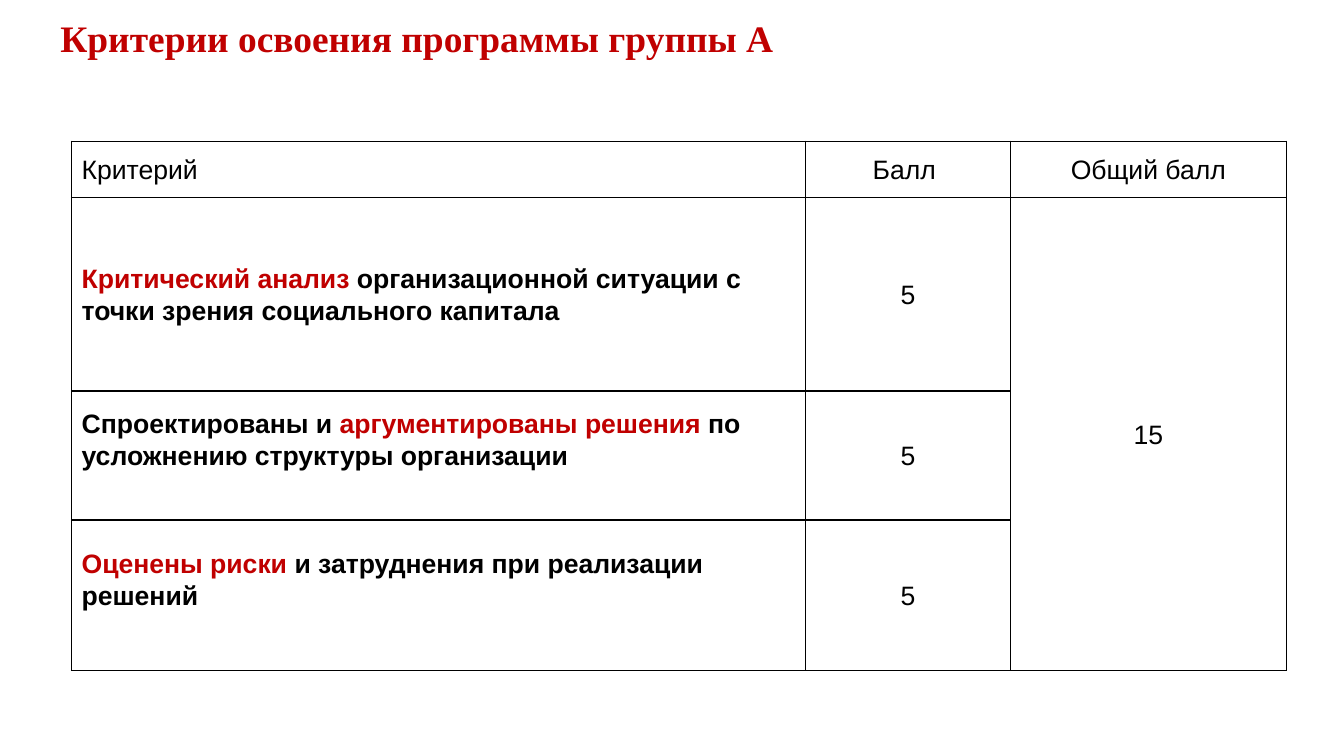
from lxml.etree import SubElement
from pptx import Presentation
from pptx.dml.color import RGBColor
from pptx.enum.text import MSO_ANCHOR, PP_ALIGN
from pptx.oxml.ns import qn
from pptx.util import Inches, Pt

RED, BLACK, WHITE = "C00000", "000000", "FFFFFF"
WIDTHS = [7.28, 2.03, 2.74]
HEIGHTS = [0.56, 1.92, 1.28, 1.49]
HEADS = ["Критерий", "Балл ", "Общий балл"]
# Runs and bottom margin of each criterion
CRITERIA = [
    ([("Критический анализ ", RED),
      ("организационной ситуации с точки зрения социального капитала", BLACK)], 0),
    ([("Спроектированы и ", BLACK), ("аргументированы решения ", RED),
      ("по усложнению структуры организации", BLACK)], 0.32),
    ([("Оценены риски ", RED),
      ("и затруднения при реализации решений", BLACK)], 0.32),
]


def color(code):
    return RGBColor.from_string(code)


def border(cell):
    props = cell._tc.get_or_add_tcPr()
    for spot, side in enumerate(("a:lnL", "a:lnR", "a:lnT", "a:lnB")):
        line = SubElement(props, qn(side), w=str(Pt(1)))
        fill = SubElement(line, qn("a:solidFill"))
        SubElement(fill, qn("a:srgbClr"), val=BLACK)
        props.insert(spot, line)


def write(cell, runs, bold=False, center=False, bottom=0):
    cell.vertical_anchor = MSO_ANCHOR.MIDDLE
    cell.margin_left = cell.margin_right = Inches(0.1)
    cell.margin_top = 0
    cell.margin_bottom = Inches(bottom)
    para = cell.text_frame.paragraphs[0]
    para.line_spacing = 1.07
    para.alignment = PP_ALIGN.CENTER if center else PP_ALIGN.LEFT
    para.font.name, para.font.size, para.font.bold = "Arial", Pt(19), bold
    for text, code in runs:
        run = para.add_run()
        run.text = text
        run.font.color.rgb = color(code)


def add_title(slide, left, top, width, height):
    frame = slide.shapes.add_textbox(
        Inches(left), Inches(top), Inches(width), Inches(height)).text_frame
    frame.word_wrap = True
    frame.vertical_anchor = MSO_ANCHOR.MIDDLE
    para = frame.paragraphs[0]
    para.text = "Критерии освоения программы группы А"
    para.line_spacing = 0.9
    font = para.font
    font.name, font.size, font.bold = "Times New Roman", Pt(26.7), True
    font.color.rgb = color(RED)


def add_scores(slide, left, top):
    """Place the table of criteria and points."""
    table = slide.shapes.add_table(
        len(HEIGHTS), len(WIDTHS), Inches(left), Inches(top),
        Inches(sum(WIDTHS)), Inches(sum(HEIGHTS))).table
    table.first_row = table.horz_banding = False
    for column, width in zip(table.columns, WIDTHS):
        column.width = Inches(width)
    for row, height in zip(table.rows, HEIGHTS):
        row.height = Inches(height)
    for cell in table.iter_cells():
        cell.fill.solid()
        cell.fill.fore_color.rgb = color(WHITE)
        border(cell)

    for col, head in enumerate(HEADS):
        write(table.cell(0, col), [(head, BLACK)], center=col > 0)
    for row, (runs, bottom) in enumerate(CRITERIA, 1):
        write(table.cell(row, 0), runs, bold=True, bottom=bottom)
        write(table.cell(row, 1), [("5", BLACK)], center=True)
    total = table.cell(1, 2)
    total.merge(table.cell(3, 2))
    write(total, [("15", BLACK)], center=True)


def main():
    deck = Presentation()
    deck.slide_width, deck.slide_height = Inches(13.33), Inches(7.5)
    slide = deck.slides.add_slide(deck.slide_layouts[6])
    add_title(slide, 0.5, 0.17, 12, 0.46)
    add_scores(slide, 0.71, 1.4)
    deck.save("out.pptx")


if __name__ == "__main__":
    main()
